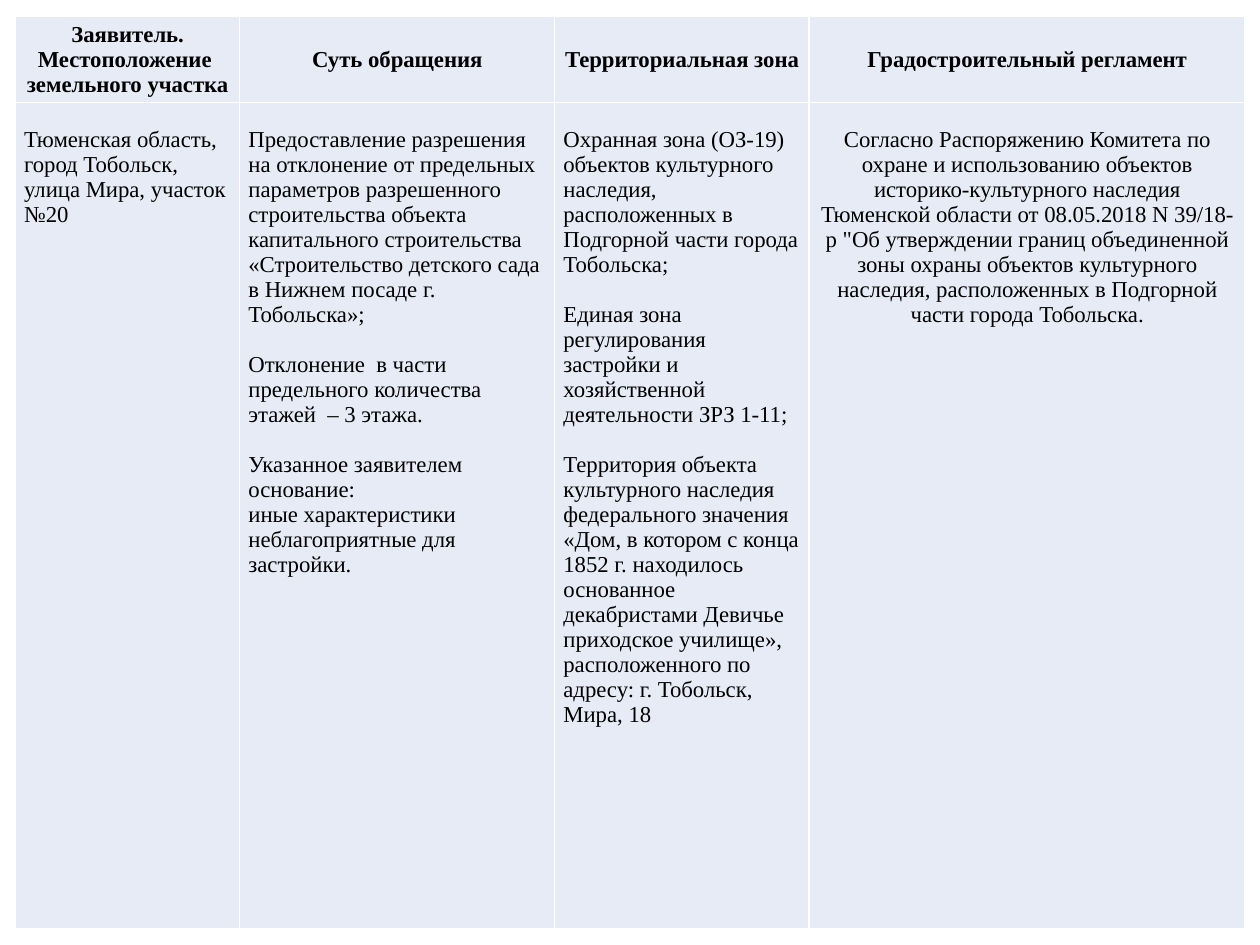
"""Build a slide with a table describing a zoning deviation request in Tobolsk."""
from dataclasses import dataclass

from lxml.etree import SubElement
from pptx import Presentation
from pptx.dml.color import RGBColor
from pptx.enum.text import MSO_ANCHOR, PP_ALIGN
from pptx.oxml.ns import qn
from pptx.util import Pt


@dataclass(frozen=True)
class Theme:
    font: str = "Times New Roman"
    size: float = 13
    line: float = 14.3
    text: str = "000000"
    fill: str = "E7EBF5"
    border: str = "FFFFFF"


theme = Theme()


def add_borders(cell):
    properties = cell._tc.get_or_add_tcPr()
    for side in ("lnL", "lnR", "lnT", "lnB"):
        line = SubElement(properties, qn(f"a:{side}"), w=str(Pt(1)))
        solid = SubElement(line, qn("a:solidFill"))
        SubElement(solid, qn("a:srgbClr"), val=theme.border)


def fill_cell(cell, paragraphs, alignment, bold):
    cell.text_frame.text = "\n".join(text for text, _ in paragraphs)
    for paragraph, (_, gap) in zip(cell.text_frame.paragraphs, paragraphs):
        paragraph.alignment = alignment
        if gap:
            paragraph.space_before = Pt(theme.line)
        paragraph.font.name = theme.font
        paragraph.font.size = Pt(theme.size)
        paragraph.font.bold = bold
        paragraph.font.color.rgb = RGBColor.from_string(theme.text)


columns = [
    (128.2, "Заявитель. Местоположение  земельного участка", PP_ALIGN.LEFT, [
        ("Тюменская область, город Тобольск, улица Мира, участок №20", False),
    ]),
    (180, "Суть обращения", PP_ALIGN.LEFT, [
        ("Предоставление разрешения на отклонение от предельных параметров "
         "разрешенного строительства объекта капитального строительства "
         "«Строительство детского сада в Нижнем посаде г. Тобольска»;", False),
        ("Отклонение  в части предельного количества этажей  – 3 этажа.", True),
        ("Указанное заявителем основание:", True),
        ("иные характеристики неблагоприятные для застройки.", False),
    ]),
    (145.4, "Территориальная зона", PP_ALIGN.LEFT, [
        ("Охранная зона (ОЗ-19) объектов культурного наследия, "
         "расположенных в Подгорной части города Тобольска;", False),
        ("Единая зона регулирования застройки и хозяйственной "
         "деятельности ЗРЗ 1-11;", True),
        ("Территория объекта культурного наследия федерального значения "
         "«Дом, в котором с конца 1852 г. находилось основанное декабристами "
         "Девичье приходское училище», расположенного по адресу: "
         "г. Тобольск, Мира, 18", True),
    ]),
    (249.1, "Градостроительный регламент", PP_ALIGN.CENTER, [
        ("Согласно Распоряжению Комитета по охране и использованию объектов "
         "историко-культурного наследия Тюменской области от 08.05.2018 "
         "N 39/18-р \"Об утверждении границ объединенной зоны охраны объектов "
         "культурного наследия, расположенных в Подгорной части города "
         "Тобольска.", False),
    ]),
]
row_heights = (49.5, 472)

presentation = Presentation()
presentation.slide_width, presentation.slide_height = Pt(720), Pt(540)
slide = presentation.slides.add_slide(presentation.slide_layouts[6])

width = sum(column[0] for column in columns)
table = slide.shapes.add_table(
    len(row_heights), len(columns), Pt(8.8), Pt(9.2), Pt(width), Pt(sum(row_heights))
).table
table.first_row = table.horz_banding = False
for row, height in zip(table.rows, row_heights):
    row.height = Pt(height)

for index, (column_width, heading, alignment, body) in enumerate(columns):
    table.columns[index].width = Pt(column_width)
    header_cell, body_cell = table.cell(0, index), table.cell(1, index)
    for cell, side, top, anchor in (
        (header_cell, 1.4, 0, MSO_ANCHOR.MIDDLE),
        (body_cell, 5, theme.line, MSO_ANCHOR.TOP),
    ):
        add_borders(cell)
        cell.fill.solid()
        cell.fill.fore_color.rgb = RGBColor.from_string(theme.fill)
        cell.margin_left = cell.margin_right = Pt(side)
        cell.margin_top, cell.margin_bottom = Pt(top), Pt(0)
        cell.vertical_anchor = anchor
    fill_cell(header_cell, [(heading, False)], PP_ALIGN.CENTER, True)
    fill_cell(body_cell, body, alignment, False)

presentation.save("out.pptx")
